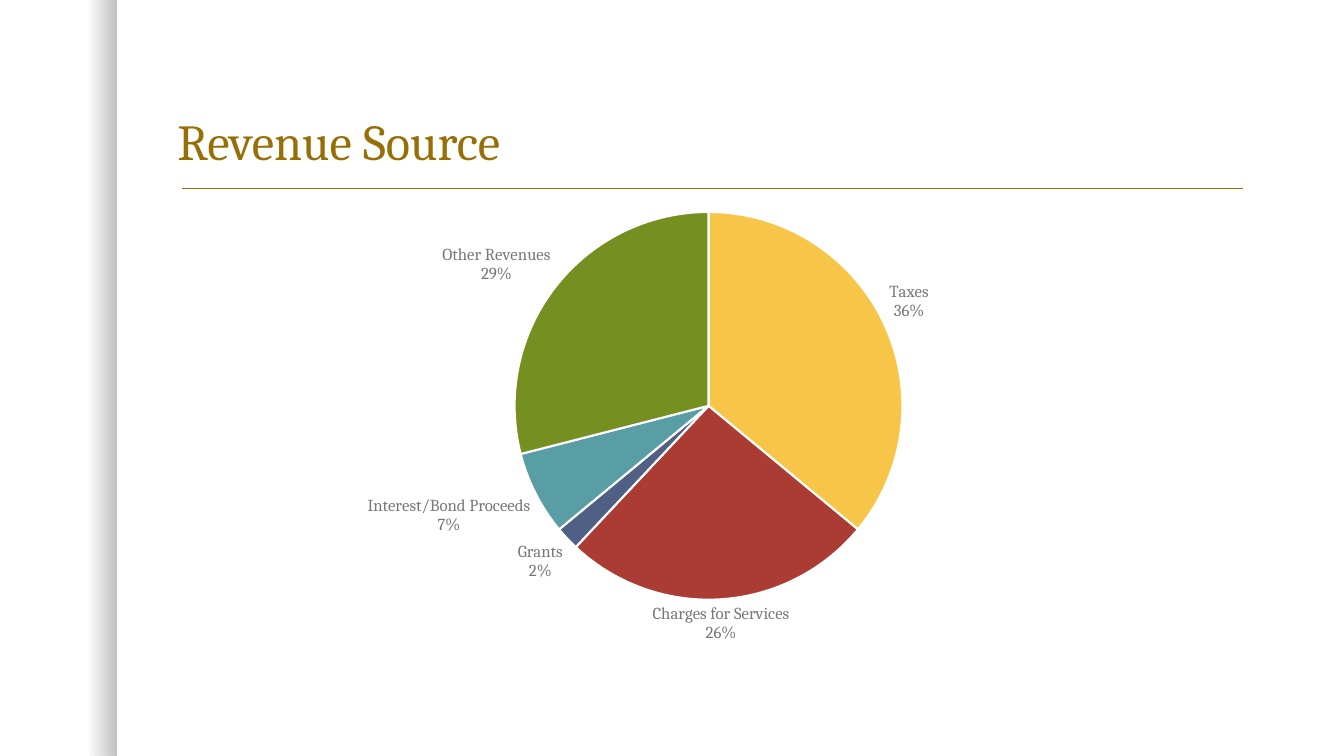
from lxml import etree
from pptx import Presentation
from pptx.chart.data import CategoryChartData
from pptx.dml.color import RGBColor
from pptx.enum.chart import XL_CHART_TYPE as ChartType, XL_LABEL_POSITION as LabelPosition
from pptx.enum.shapes import MSO_CONNECTOR as Connector, MSO_SHAPE as Shape
from pptx.enum.text import MSO_ANCHOR as Anchor, PP_ALIGN as Align
from pptx.oxml import parse_xml
from pptx.oxml.ns import nsdecls, qn
from pptx.util import Inches, Pt

FONT = "Cambria"
GOLD = "986F07"
REVENUE = [
    ("Taxes", 36, "F7C547"),
    ("Charges for Services", 26, "AB3C33"),
    ("Grants", 2, "506084"),
    ("Interest/Bond Proceeds", 7, "599EA5"),
    ("Other Revenues", 29, "758F21"),
]


def color(value):
    """Turn a hex string into a colour."""
    return RGBColor.from_string(value)


def style_font(font, size, hex_color):
    """Apply the slide's typeface with a size and colour."""
    font.name = FONT
    font.size = Pt(size)
    font.color.rgb = color(hex_color)


def add_edge_shade(slide, box):
    """Shade the right quarter of a band along the slide's left edge."""
    band = slide.shapes.add_shape(Shape.RECTANGLE, *map(Inches, box))
    band.shadow.inherit = False
    band.line.fill.background()
    band.fill.background()
    properties = band.element.spPr
    stops = "".join(
        f'<a:gs pos="{position * 1000}"><a:srgbClr val="000000">'
        f'<a:alpha val="{opacity * 1000}"/></a:srgbClr></a:gs>'
        for position, opacity in [(75, 0), (100, 25)]
    )
    gradient = parse_xml(
        f'<a:gradFill {nsdecls("a")}><a:gsLst>{stops}</a:gsLst><a:lin ang="0"/></a:gradFill>'
    )
    properties.replace(properties.find(qn("a:noFill")), gradient)


def add_title(slide, box, text):
    """Place the title with a rule just beneath it."""
    left, top, width, height = box
    title = slide.shapes.title
    title.left, title.top, title.width, title.height = map(Inches, box)
    frame = title.text_frame
    frame.text = text
    frame.word_wrap = True
    frame.vertical_anchor = Anchor.BOTTOM
    paragraph = frame.paragraphs[0]
    paragraph.alignment = Align.LEFT
    paragraph.line_spacing = 0.9
    style_font(paragraph.runs[0].font, 36, GOLD)

    rule_y = Inches(top + height + 0.12)
    rule = slide.shapes.add_connector(
        Connector.STRAIGHT, Inches(left + 0.15), rule_y, Inches(left + width - 0.08), rule_y
    )
    rule.line.color.rgb = color(GOLD)
    rule.line.width = Pt(1)
    etree.SubElement(rule.element.spPr, qn("a:effectLst"))


def set_plot_layout(chart, x, y, width, height):
    """Fix the inner plot area as shares of the chart."""
    plot_area = chart.element.find(".//" + qn("c:plotArea")) if hasattr(chart, "element") else (
        chart.plots[0]._element.getparent()
    )
    for layout in plot_area.findall(qn("c:layout")):
        plot_area.remove(layout)
    settings = [("layoutTarget", "inner"), ("xMode", "edge"), ("yMode", "edge"),
                ("x", x), ("y", y), ("w", width), ("h", height)]
    items = "".join(f'<c:{name} val="{value}"/>' for name, value in settings)
    plot_area.insert(0, parse_xml(
        f'<c:layout {nsdecls("c")}><c:manualLayout>{items}</c:manualLayout></c:layout>'
    ))


def add_revenue_pie(slide, box):
    """Draw the revenue pie with category and percentage labels."""
    names, values, fills = zip(*REVENUE)
    data = CategoryChartData()
    data.categories = names
    data.add_series("Series 1", values)
    chart = slide.shapes.add_chart(ChartType.PIE, *map(Inches, box), data).chart
    chart.has_title = False
    chart.has_legend = False
    style_font(chart.font, 10, "303030")
    set_plot_layout(chart, 0, 0.04, 0.98, 0.84)

    plot = chart.plots[0]
    plot.vary_by_categories = True
    series = plot.series[0]
    for index, fill in enumerate(fills):
        slice_format = series.points[index].format
        slice_format.fill.solid()
        slice_format.fill.fore_color.rgb = color(fill)
        slice_format.line.color.rgb = color("FFFFFF")
        slice_format.line.width = Pt(1.5)

    labels = series.data_labels
    labels.show_value = False
    labels.show_category_name = True
    labels.show_percentage = True
    labels.number_format = "0%"
    labels.number_format_is_linked = False
    labels.position = LabelPosition.OUTSIDE_END
    style_font(labels.font, 12, "787878")
    separator = parse_xml(f'<c:separator {nsdecls("c")}>\n</c:separator>')
    separator.text = "\n"
    labels._element.find(qn("c:showBubbleSize")).addnext(separator)


def main():
    """Build and save the revenue slide."""
    presentation = Presentation()
    presentation.slide_width = Inches(13.33)
    presentation.slide_height = Inches(7.5)
    slide = presentation.slides.add_slide(presentation.slide_layouts.get_by_name("Title Only"))
    add_edge_shade(slide, (0, 0, 1.16, 7.5))
    add_title(slide, (1.66, 0.42, 10.75, 1.33), "Revenue Source")
    add_revenue_pie(slide, (2.25, 1.92, 9.75, 4.58))
    presentation.save("out.pptx")


if __name__ == "__main__":
    main()
